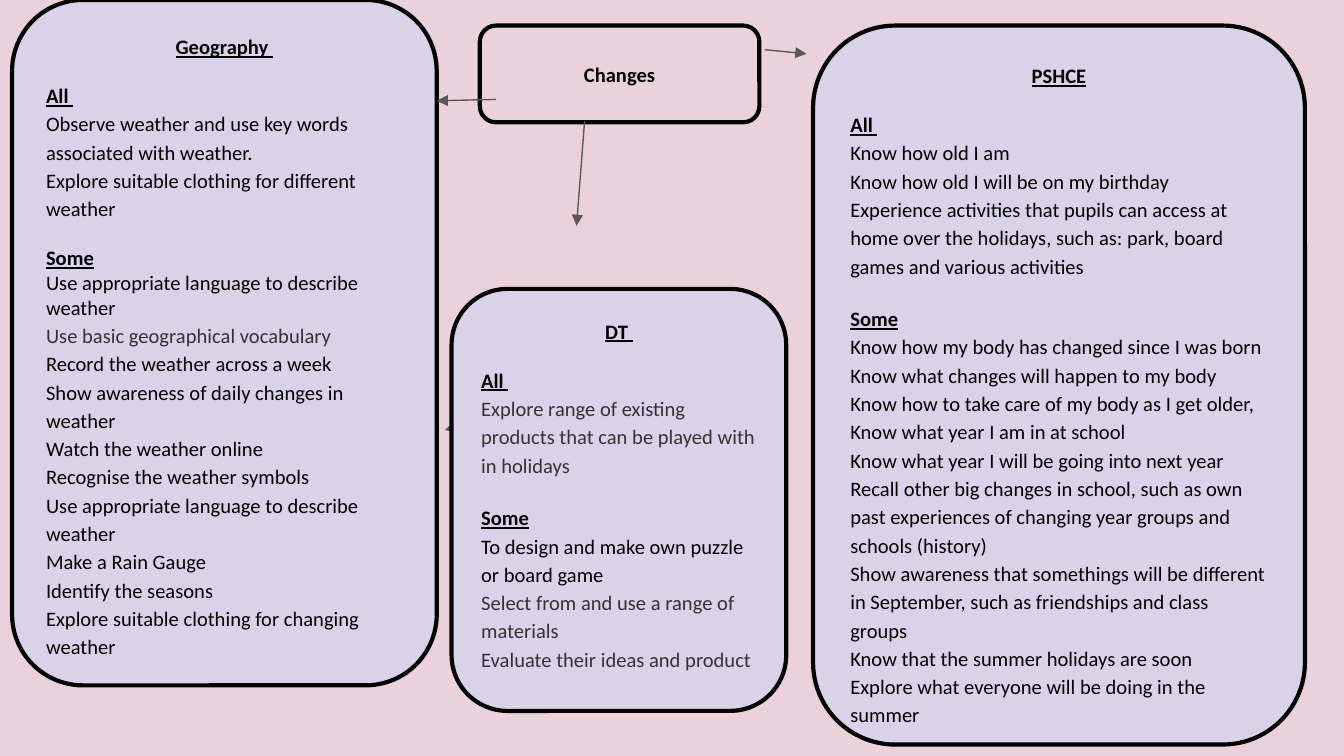
"""Build the Changes topic map slide with its three subject panels."""
from lxml.etree import SubElement
from pptx import Presentation
from pptx.dml.color import RGBColor
from pptx.enum.shapes import MSO_CONNECTOR as Connector, MSO_SHAPE as Shape
from pptx.enum.text import MSO_ANCHOR as Anchor, PP_ALIGN as Align
from pptx.oxml.ns import qn
from pptx.util import Inches, Pt

PINK = RGBColor(0xEA, 0xD1, 0xDC)
LILAC = RGBColor(0xD9, 0xD2, 0xE9)
BLACK = RGBColor(0, 0, 0)
CHARCOAL = RGBColor(0x33, 0x33, 0x33)
GREY = RGBColor(0x59, 0x59, 0x59)

SLIDE_WIDTH = Inches(10)
SLIDE_HEIGHT = SLIDE_WIDTH * 9 // 16
HEADING = {"bold": True, "underline": True}
LABEL = {"bold": True}
LINE_GAP = 13
WIDE_GAP = 15

TOPIC = ("Changes", (3.57, 0.19, 2.08, 0.72))
ARROWS = [
    ((4.35, 0.9), (4.29, 1.68)),
    ((5.69, 0.37), (6, 0.4)),
    ((3.63, 3.11), (3.31, 3.2)),
    ((3.69, 0.74), (3.25, 0.75)),
]
PSHCE = {
    "title": "PSHCE",
    "box": (6.05, 0.19, 3.66, 5.35),
    "some_gap": WIDE_GAP,
    "all": [
        "Know how old I am",
        "Know how old I will be on my birthday",
        "Experience activities that pupils can access at home over the holidays, "
        "such as: park, board games and various activities",
    ],
    "some": [
        "Know how my body has changed since I was born",
        "Know what changes will happen to my body",
        "Know how to take care of my body as I get older,",
        "Know what year I am in at school",
        "Know what year I will be going into next year",
        "Recall other big changes in school, such as own past experiences of "
        "changing year groups and schools (history)",
        "Show awareness that somethings will be different in September, such as "
        "friendships and class groups",
        "Know that the summer holidays are soon",
        "Explore what everyone will be doing in the summer",
    ],
}
GEOGRAPHY = {
    "title": "Geography ",
    "box": (0.09, 0, 3.16, 5.1),
    "some_gap": LINE_GAP,
    "all": [
        "Observe weather and use key words associated with weather.",
        "Explore suitable clothing for different weather",
    ],
    "some": [
        ("Use appropriate language to describe weather", BLACK, 1.0),
        ("Use basic geographical vocabulary", CHARCOAL, 1.15),
        "Record the weather across a week",
        "Show awareness of daily changes in weather",
        "Watch the weather online",
        "Recognise the weather symbols",
        "Use appropriate language to describe weather",
        "Make a Rain Gauge",
        "Identify the seasons",
        "Explore suitable clothing for changing weather",
    ],
}
DT = {
    "title": "DT ",
    "box": (3.36, 2.15, 2.49, 3.14),
    "some_gap": WIDE_GAP,
    "all": [
        ("Explore range of existing products that can be played with in holidays",
         CHARCOAL, 1.15),
    ],
    "some": [
        "To design and make own puzzle or board game",
        ("Select from and use a range of materials", CHARCOAL, 1.15),
        ("Evaluate their ideas and product", CHARCOAL, 1.15),
    ],
}


def set_values(target, values):
    for name, value in values.items():
        setattr(target, name, value)


def add_box(slide, box, fill, anchor):
    shape = slide.shapes.add_shape(Shape.ROUNDED_RECTANGLE, *map(Inches, box))
    shape.shadow.inherit = False
    shape.adjustments[0] = 0.167
    shape.fill.solid()
    shape.fill.fore_color.rgb = fill
    shape.line.color.rgb = BLACK
    shape.line.width = Pt(2.25)
    frame = shape.text_frame
    margins = {f"margin_{side}": Inches(0.1) for side in ("left", "top", "right", "bottom")}
    set_values(frame, {"word_wrap": True, "vertical_anchor": anchor, **margins})
    return frame


def write(paragraph, text, font=None, color=BLACK, **layout):
    set_values(paragraph, {"alignment": Align.LEFT, **layout})
    run = paragraph.add_run()
    run.text = text
    set_values(run.font, {"name": "Calibri", "size": Pt(11), **(font or {})})
    run.font.color.rgb = color


def add_panel(slide, panel):
    frame = add_box(slide, panel["box"], LILAC, Anchor.TOP)
    write(frame.paragraphs[0], panel["title"], HEADING, alignment=Align.CENTER)
    groups = [("All ", LINE_GAP, panel["all"]), ("Some", panel["some_gap"], panel["some"])]
    for heading, gap, items in groups:
        write(frame.add_paragraph(), heading, HEADING, space_before=Pt(gap))
        for item in items:
            text, color, spacing = (item, BLACK, 1.15) if isinstance(item, str) else item
            write(frame.add_paragraph(), text, color=color, line_spacing=spacing)


def add_arrow(slide, start, end):
    arrow = slide.shapes.add_connector(Connector.STRAIGHT, *map(Inches, start + end))
    arrow.line.color.rgb = GREY
    arrow.line.width = Pt(0.75)
    properties = arrow._element.spPr
    SubElement(properties.find(qn("a:ln")), qn("a:tailEnd"), type="triangle", w="med", len="med")
    SubElement(properties, qn("a:effectLst"))


def main():
    presentation = Presentation()
    set_values(presentation, {"slide_width": SLIDE_WIDTH, "slide_height": SLIDE_HEIGHT})
    slide = presentation.slides.add_slide(presentation.slide_layouts[6])
    slide.background.fill.solid()
    slide.background.fill.fore_color.rgb = PINK

    title, box = TOPIC
    frame = add_box(slide, box, PINK, Anchor.MIDDLE)
    write(frame.paragraphs[0], title, LABEL, alignment=Align.CENTER)
    for panel in (PSHCE, GEOGRAPHY):
        add_panel(slide, panel)
    for start, end in ARROWS:
        add_arrow(slide, start, end)
    add_panel(slide, DT)
    presentation.save("out.pptx")


if __name__ == "__main__":
    main()
